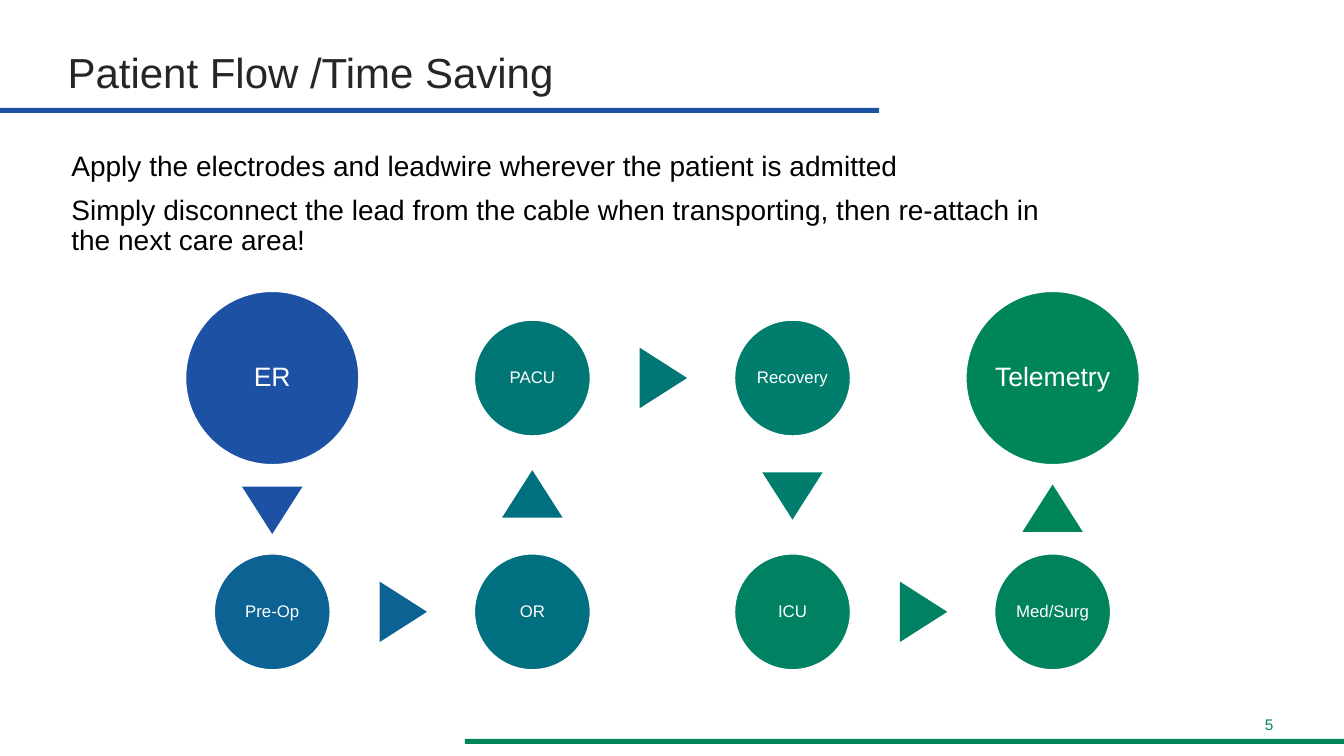
from pptx import Presentation
from pptx.dml.color import RGBColor
from pptx.enum.shapes import MSO_SHAPE
from pptx.enum.text import MSO_ANCHOR, PP_ALIGN
from pptx.util import Inches, Pt

WIDTH, HEIGHT = 13.33, 7.5
BLUE, GREEN, WHITE = "1D51A4", "008557", "FFFFFF"
BIG, SMALL = 1.72, 1.15            # circle diameters
COLUMN_STEP, ROW_STEP = 2.58, 2.32  # between circle centres
ARROW_BASE, ARROW_HEIGHT = 0.6, 0.47
ARROW_LEAD = 0.01                  # arrows sit slightly towards their target

# label, column, row, diameter, colour
STOPS = [
    ("ER", 0, 0, BIG, BLUE),
    ("Pre-Op", 0, 1, SMALL, "0B6293"),
    ("OR", 1, 1, SMALL, "006F7F"),
    ("PACU", 1, 0, SMALL, "007775"),
    ("Recovery", 2, 0, SMALL, "007D6D"),
    ("ICU", 2, 1, SMALL, "008161"),
    ("Med/Surg", 3, 1, SMALL, "00825C"),
    ("Telemetry", 3, 0, BIG, GREEN),
]


def rgb(value):
    return RGBColor.from_string(value)


def style_text(p, size, color, align=PP_ALIGN.LEFT, spacing=0.9):
    p.alignment = align
    p.line_spacing = spacing
    for r in p.runs:
        r.font.name = "Arial"
        r.font.size = Pt(size)
        r.font.color.rgb = rgb(color)


def add_filled(s, kind, box, fill):
    sp = s.shapes.add_shape(kind, *map(Inches, box))
    sp.shadow.inherit = False
    sp.fill.solid()
    sp.fill.fore_color.rgb = rgb(fill)
    sp.line.fill.background()
    return sp


def add_frame(s):
    """Blue bar under the title, green bar and page number at the foot."""
    bar_width, bar_height = 8.72, 0.05
    add_filled(s, MSO_SHAPE.RECTANGLE, (0, 1.07, bar_width, bar_height), BLUE)
    add_filled(s, MSO_SHAPE.RECTANGLE,
               (WIDTH - bar_width, 7.33, bar_width, bar_height), GREEN)
    number = s.shapes.add_textbox(*map(Inches, (11.82, 7.05, 0.91, 0.31)))
    number.text_frame.text = "5"
    style_text(number.text_frame.paragraphs[0], 11, GREEN, PP_ALIGN.RIGHT, 1.0)


def add_title(s, box, text):
    title = s.shapes.title
    title.left, title.top, title.width, title.height = map(Inches, box)
    tf = title.text_frame
    tf.text = text
    tf.vertical_anchor = MSO_ANCHOR.MIDDLE
    style_text(tf.paragraphs[0], 30, "262626")


def add_body(s, box, lines):
    tf = s.shapes.add_textbox(*map(Inches, box)).text_frame
    tf.word_wrap = True
    tf.text = "\n".join(lines)
    for i, p in enumerate(tf.paragraphs):
        style_text(p, 20, "000000")
        p.space_before = Pt(10 if i else 0)


def add_stop(s, x, y, label, diameter, color):
    """Labelled circle centred on x, y."""
    box = (x - diameter / 2, y - diameter / 2, diameter, diameter)
    sp = add_filled(s, MSO_SHAPE.OVAL, box, color)
    sp.line.color.rgb = rgb(WHITE)
    sp.line.width = Pt(1)
    tf = sp.text_frame
    tf.word_wrap = True
    tf.vertical_anchor = MSO_ANCHOR.MIDDLE
    tf.margin_left = tf.margin_right = Inches(0.02)
    tf.margin_top = tf.margin_bottom = Inches(0.02)
    tf.text = label
    style_text(tf.paragraphs[0], 19 if diameter == BIG else 12, WHITE,
               PP_ALIGN.CENTER)


def add_arrow(s, start, end, color):
    """Triangle midway in the gap between two (x, y, diameter) circles."""
    (x1, y1, d1), (x2, y2, d2) = start, end
    dx = (x2 > x1) - (x2 < x1)
    dy = (y2 > y1) - (y2 < y1)
    shift = (d1 - d2) / 4 + ARROW_LEAD
    x = (x1 + x2) / 2 + dx * shift
    y = (y1 + y2) / 2 + dy * shift
    box = (x - ARROW_BASE / 2, y - ARROW_HEIGHT / 2, ARROW_BASE, ARROW_HEIGHT)
    sp = add_filled(s, MSO_SHAPE.ISOSCELES_TRIANGLE, box, color)
    sp.rotation = {(0, -1): 0, (1, 0): 90, (0, 1): 180}[dx, dy]


def add_flow(s, left, top):
    """Snaking care path; left, top is the corner of the first circle."""
    circles = []
    for label, column, row, diameter, color in STOPS:
        x = left + BIG / 2 + column * COLUMN_STEP
        y = top + BIG / 2 + row * ROW_STEP
        add_stop(s, x, y, label, diameter, color)
        circles.append((x, y, diameter))
    # Each arrow has the colour of its start, the last one that of its end
    colors = [stop[-1] for stop in STOPS[:-2]] + [GREEN]
    for start, end, color in zip(circles, circles[1:], colors):
        add_arrow(s, start, end, color)


def main():
    prs = Presentation()
    prs.slide_width, prs.slide_height = Inches(WIDTH), Inches(HEIGHT)
    s = prs.slides.add_slide(prs.slide_layouts[5])
    add_frame(s)
    add_title(s, (0.57, 0.3, 11.5, 0.89), "Patient Flow /Time Saving")
    add_body(s, (0.61, 1.46, 10.26, 1.14), [
        "Apply the electrodes and leadwire wherever the patient is admitted",
        "Simply disconnect the lead from the cable when transporting, "
        "then re-attach in the next care area!",
    ])
    add_flow(s, 1.84, 2.89)
    prs.save("out.pptx")


if __name__ == "__main__":
    main()
